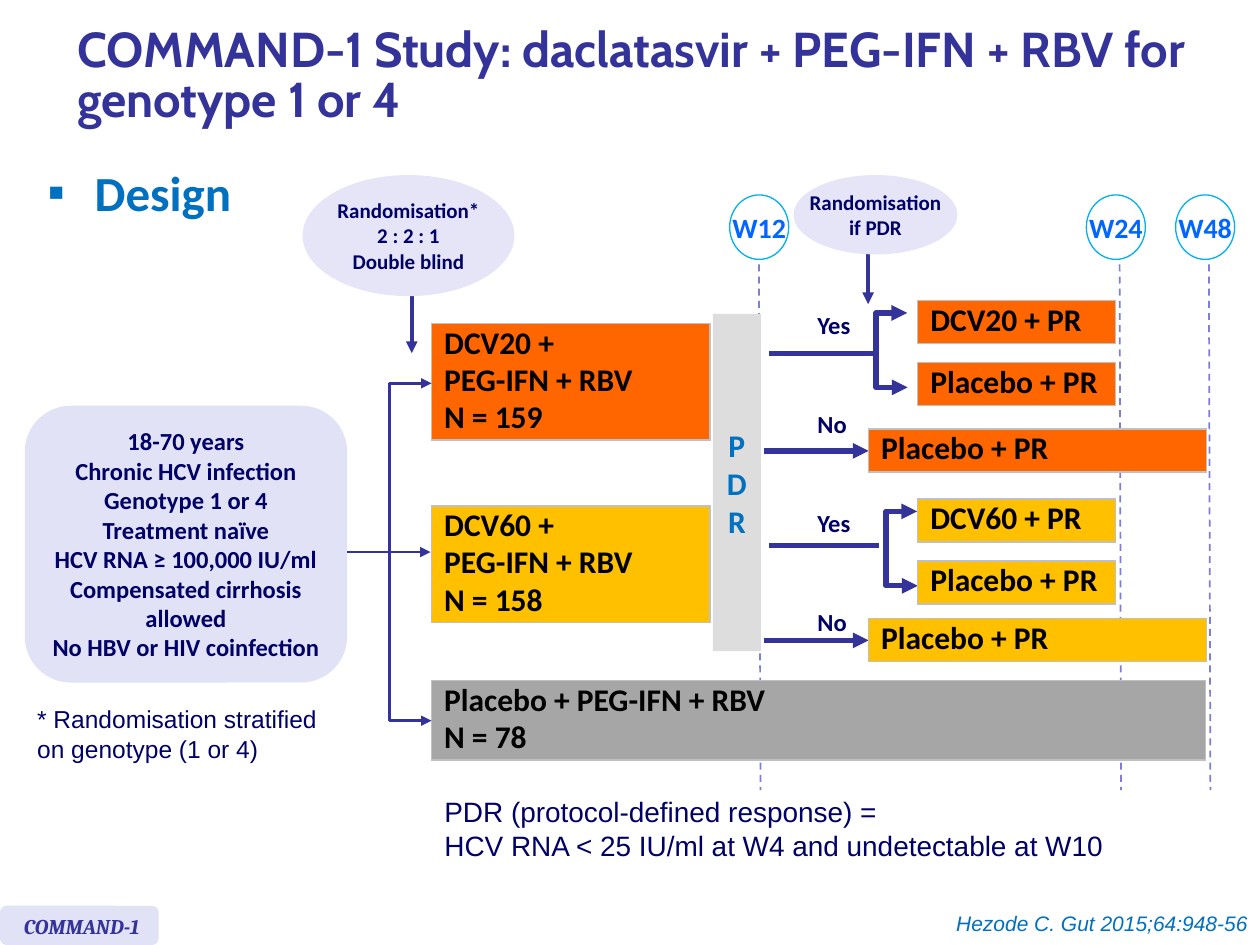
from lxml import etree
from pptx import Presentation
from pptx.dml.color import RGBColor
from pptx.enum.dml import MSO_LINE
from pptx.enum.shapes import MSO_CONNECTOR, MSO_SHAPE
from pptx.enum.text import MSO_ANCHOR, MSO_AUTO_SIZE, PP_ALIGN
from pptx.oxml.ns import qn
from pptx.util import Cm, Pt

STRAIGHT, ELBOW = MSO_CONNECTOR.STRAIGHT, MSO_CONNECTOR.ELBOW
OVAL, ROUNDED, RECTANGLE = MSO_SHAPE.OVAL, MSO_SHAPE.ROUNDED_RECTANGLE, MSO_SHAPE.RECTANGLE
LEFT, CENTER, RIGHT = PP_ALIGN.LEFT, PP_ALIGN.CENTER, PP_ALIGN.RIGHT
MIDDLE = MSO_ANCHOR.MIDDLE
DASH = MSO_LINE.DASH
NO_AUTOFIT = MSO_AUTO_SIZE.NONE

COLORS = {
    "indigo": "333399", "navy": "000066", "blue": "0070C0", "week": "0066FF",
    "ring": "00B0F0", "dash": "7E7ED4", "oval": "E5E5F7", "panel": "E2E2F6",
    "orange": "FF6600", "yellow": "FFC000", "gray": "A6A6A6", "pdr": "DDDDDD",
    "border": "C0C0C0", "black": "000000", "white": "FFFFFF",
}


def rgb(name):
    return RGBColor.from_string(COLORS[name])


def write(frame, lines, size, color, font="Calibri", bold=True, italic=False,
          align=LEFT, spacing=None, gap=0):
    for index, line in enumerate(lines):
        paragraph = frame.paragraphs[0] if index == 0 else frame.add_paragraph()
        paragraph.alignment = align
        if spacing:
            paragraph.line_spacing = spacing
        if index and gap:
            paragraph.space_before = Pt(gap)
        run = paragraph.add_run()
        run.text = line
        run.font.name, run.font.size = font, Pt(size)
        run.font.bold, run.font.italic = bold, italic
        run.font.color.rgb = rgb(color)


def add_text(shapes, box, lines, size, color, wrap=True, **style):
    frame = shapes.add_textbox(*map(Cm, box)).text_frame
    frame.word_wrap = wrap
    write(frame, lines, size, color, **style)
    return frame


def add_panel(shapes, kind, box, fill, lines=(), size=12, color="navy", line=None, wrap=True):
    shape = shapes.add_shape(kind, *map(Cm, box))
    shape.shadow.inherit = False
    shape.fill.solid()
    shape.fill.fore_color.rgb = rgb(fill)
    if line:
        shape.line.color.rgb = rgb(line)
        shape.line.width = Pt(0.75)
    else:
        shape.line.fill.background()
    shape.text_frame.word_wrap = wrap
    shape.text_frame.vertical_anchor = MIDDLE
    write(shape.text_frame, lines, size, color, align=CENTER)


def add_line(shapes, start, end, width, color="indigo", kind=STRAIGHT, ends=()):
    connector = shapes.add_connector(kind, *map(Cm, (*start, *end)))
    connector.line.color.rgb = rgb(color)
    connector.line.width = Pt(width)
    outline = connector._element.spPr.find(qn("a:ln"))
    for name in ends:
        etree.SubElement(outline, qn(f"a:{name}"), type="triangle")
    etree.SubElement(connector._element.spPr, qn("a:effectLst"))
    return connector


def add_treatment(shapes, box, lines, fill):
    table = shapes.add_table(1, 1, *map(Cm, box)).table
    table.first_row = table.horz_banding = False
    cell = table.cell(0, 0)
    properties = cell._tc.get_or_add_tcPr()
    for side in ("lnL", "lnR", "lnT", "lnB"):
        border = etree.SubElement(properties, qn(f"a:{side}"), w=str(Pt(1)))
        solid = etree.SubElement(border, qn("a:solidFill"))
        etree.SubElement(solid, qn("a:srgbClr"), val=COLORS["border"])
    cell.fill.solid()
    cell.fill.fore_color.rgb = rgb(fill)
    cell.vertical_anchor = MIDDLE
    write(cell.text_frame, lines, 18, "black", spacing=0.8, gap=3.6)


def add_title(slide, box, text):
    title = slide.shapes.title
    title.left, title.top, title.width, title.height = map(Cm, box)
    frame = title.text_frame
    frame.auto_size = NO_AUTOFIT
    frame.word_wrap = True
    frame.vertical_anchor = MIDDLE
    write(frame, [text], 28, "indigo", font="Cabin", spacing=0.85)


def add_heading(shapes, box, text):
    frame = add_text(shapes, box, [], 28, "blue")
    properties = frame.paragraphs[0]._p.get_or_add_pPr()
    properties.set("marL", str(Cm(0.95)))
    properties.set("indent", str(-Cm(0.95)))
    color = etree.SubElement(properties, qn("a:buClr"))
    etree.SubElement(color, qn("a:srgbClr"), val=COLORS["blue"])
    etree.SubElement(properties, qn("a:buFont"), typeface="Arial")
    etree.SubElement(properties, qn("a:buChar"), char="▪")
    write(frame, [text], 28, "blue")


def add_week(shapes, left, top, label, line_offset):
    x = left + line_offset
    add_line(shapes, (x, top + 1.4), (x + 0.03, top + 12), 1, "dash").line.dash_style = DASH
    add_panel(shapes, OVAL, (left, top, 1.19, 1.3), "white", [label], 16, "week", "ring", False)


def add_randomisation(shapes, box, lines, arrow_x, arrow_top):
    left, top = box[:2]
    start = (left + arrow_x, top + arrow_top)
    add_line(shapes, start, (start[0], start[1] + 1.2), 2.25, ends=["tailEnd"])
    add_panel(shapes, OVAL, box, "oval", lines, wrap=False)


def add_enrolment(shapes, box, criteria):
    left, top, width, height = box
    add_panel(shapes, ROUNDED, box, "panel", criteria, 14)
    start = (left + width, top + 2.95)
    for drop in (-3.4, 3.4):
        add_line(shapes, start, (start[0] + 1.7, start[1] + drop), 1.5, kind=ELBOW, ends=["tailEnd"])
    add_line(shapes, start, (start[0] + 1.68, start[1]), 1.5, ends=["tailEnd"])


def add_bracket(shapes, left, top, depth, height):
    sliver = 0.01
    bracket = add_line(shapes, (left + depth, top), (left + depth + sliver, top + height), 3,
                       kind=ELBOW, ends=["headEnd", "tailEnd"])
    guides = bracket._element.spPr.find(qn("a:prstGeom")).get_or_add_avLst()
    etree.SubElement(guides, qn("a:gd"), name="adj1", fmla=f"val {round(-depth / sliver * 100000)}")


def add_response_branch(shapes, left, top, dose, fill, yes_y, yes_end, no_top, spine):
    add_line(shapes, (left + 0.1, top + yes_y), (left + yes_end, top + yes_y), 3)
    add_bracket(shapes, left + spine, top + 0.25, 0.63, 1.5)
    for row, label in enumerate((dose, "Placebo + PR")):
        add_treatment(shapes, (left + 3.1, top + row * 1.25, 3.99, 0.86), [label], fill)
    no_y = top + no_top + 0.44
    add_line(shapes, (left, no_y), (left + 2.11, no_y), 3, ends=["tailEnd"])
    add_treatment(shapes, (left + 2.11, top + no_top, 6.81, 0.86), ["Placebo + PR"], fill)
    for label, offset in (("Yes", 0.06), ("No", 2.06)):
        add_text(shapes, (left + 0.83, top + offset, 1.4, 0.86), [label], 14, "navy")


def add_study_tag(shapes, left, top, label):
    tag = shapes.add_group_shape().shapes
    add_panel(tag, ROUNDED, (left, top, 3.2, 0.79), "panel")
    add_text(tag, (left + 0.23, top + 0.03, 3.28, 0.76), [label], 12, "indigo",
             font="Cambria", italic=True)


def main():
    presentation = Presentation()
    presentation.slide_width, presentation.slide_height = Cm(25.4), Cm(19.05)
    slide = presentation.slides.add_slide(presentation.slide_layouts[5])
    shapes = slide.shapes

    add_title(slide, (1.3, 0.2, 23.19, 2.72),
              "COMMAND-1 Study: daclatasvir + PEG-IFN + RBV for genotype 1 or 4")
    add_heading(shapes, (0.71, 3.15, 5.03, 1.6), "Design")
    for label, left, offset in (("W12", 14.71, 0.59), ("W24", 21.9, 0.67), ("W48", 23.7, 0.67)):
        add_week(shapes, left, 3.93, label, offset)
    add_randomisation(shapes, (6.1, 3.53, 4.27, 2.44),
                      ["Randomisation*", "2 : 2 : 1", "Double blind"], 2.2, 2.39)
    add_randomisation(shapes, (16, 3.53, 3.3, 1.6), ["Randomisation", "if PDR"], 1.5, 1.4)

    for top, width, height, fill, lines in (
        (6.52, 5.61, 2.35, "orange", ["DCV20 +", "PEG-IFN + RBV", "N = 159"]),
        (10.2, 5.61, 2.35, "yellow", ["DCV60 +", "PEG-IFN + RBV", "N = 158"]),
        (13.72, 15.6, 1.6, "gray", ["Placebo + PEG-IFN + RBV", "N = 78"]),
    ):
        add_treatment(shapes, (8.7, top, width, height), lines, fill)
    add_panel(shapes, RECTANGLE, (14.37, 6.33, 0.97, 6.8), "pdr", list("PDR"), 18, "blue")
    add_response_branch(shapes, 15.4, 6.06, "DCV20 + PR", "orange", 1.07, 2.25, 2.59, 2.26)
    add_response_branch(shapes, 15.4, 10.06, "DCV60 + PR", "yellow", 0.94, 2.31, 2.41, 2.46)
    add_enrolment(shapes, (0.5, 8.18, 6.5, 5.58), [
        "18-70 years", "Chronic HCV infection", "Genotype 1 or 4", "Treatment naïve",
        "HCV RNA ≥ 100,000 IU/ml", "Compensated cirrhosis allowed", "No HBV or HIV coinfection"])

    add_text(shapes, (0.5, 14.07, 6.32, 1.45),
             ["* Randomisation stratified", "on genotype (1 or 4)"], 14, "navy",
             wrap=False, font="Arial", bold=False)
    add_text(shapes, (8.71, 15.9, 15.8, 1.63),
             ["PDR (protocol-defined response) =",
              "HCV RNA < 25 IU/ml at W4 and undetectable at W10"],
             16, "navy", font="Arial", bold=False)
    add_text(shapes, (15.3, 18.24, 10.11, 0.76), ["Hezode C. Gut 2015;64:948-56"],
             12, "blue", font="Arial", bold=False, italic=True, align=RIGHT)
    add_study_tag(shapes, 0, 18.26, "COMMAND-1")
    presentation.save("out.pptx")


if __name__ == "__main__":
    main()
